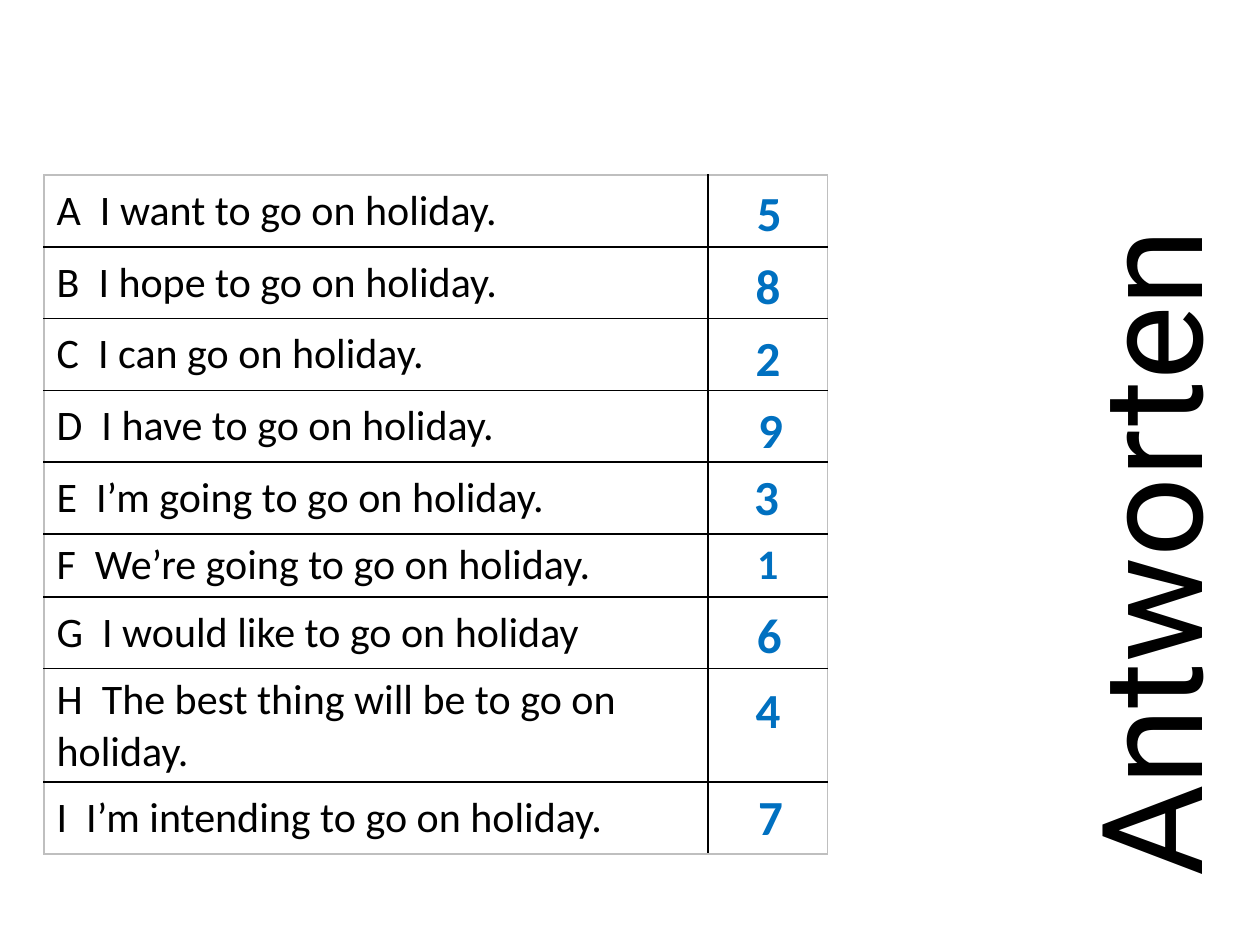
from lxml import etree
from pptx import Presentation
from pptx.dml.color import RGBColor
from pptx.enum import text
from pptx.oxml.ns import qn
from pptx.util import Pt

BLACK = RGBColor(0x00, 0x00, 0x00)
BLUE = RGBColor(0x00, 0x70, 0xC0)
GREY = RGBColor(0xBF, 0xBF, 0xBF)

SENTENCES = [
    "A  I want to go on holiday.",
    "B  I hope to go on holiday.",
    "C  I can go on holiday.",
    "D  I have to go on holiday.",
    "E  I’m going to go on holiday.",
    "F  We’re going to go on holiday.",
    "G  I would like to go on holiday",
    "H  The best thing will be to go on holiday.",
    "I  I’m intending to go on holiday.",
]
# Answer number: left and top of its box
ANSWERS = {
    "5": (416.9, 100.8), "8": (416.2, 142.6), "2": (416.2, 183.6),
    "9": (417.6, 224.6), "3": (415.4, 262.8), "6": (416.9, 342),
    "4": (416.2, 384.5), "7": (417.6, 445.7),
}


def write(frame, words, align, color, **font):
    para = frame.paragraphs[0]
    para.alignment = align
    span = para.add_run()
    span.text = words
    span.font.color.rgb = color
    for name, value in font.items():
        setattr(span.font, name, value)


def draw_border(cell, side, color):
    line = etree.SubElement(cell._tc.get_or_add_tcPr(), qn(f"a:{side}"), w=str(Pt(1)))
    fill = etree.SubElement(line, qn("a:solidFill"))
    etree.SubElement(fill, qn("a:srgbClr"), val=str(color))


deck = Presentation()
deck.slide_width, deck.slide_height = Pt(720), Pt(540)
page = deck.slides.add_slide(deck.slide_layouts[5])

# Title, turned to read upwards along the right edge
title = page.shapes.title
title_format = {"left": Pt(363.6), "top": Pt(164.2), "width": Pt(583.9),
                "height": Pt(104.4), "rotation": 270}
for name, value in title_format.items():
    setattr(title, name, value)
title.text_frame.vertical_anchor = text.MSO_ANCHOR.TOP
title.text_frame.auto_size = text.MSO_AUTO_SIZE.SHAPE_TO_FIT_TEXT
write(title.text_frame, "Antworten", text.PP_ALIGN.LEFT, BLACK,
      name="Roboto", size=Pt(80))

# Table of sentences
rows = len(SENTENCES)
table = page.shapes.add_table(rows, 2, Pt(25.2), Pt(100.1), Pt(447.8), Pt(360)).table
table.first_row = table.horz_banding = False
table.columns[0].width, table.columns[1].width = Pt(379.4), Pt(68.4)
for index, sentence in enumerate(SENTENCES):
    table.rows[index].height = Pt(32.4 if sentence.startswith("F") else 41)
    write(table.cell(index, 0).text_frame, sentence, text.PP_ALIGN.LEFT, BLACK,
          name="Calibri", size=Pt(24))
    for column in range(2):
        cell = table.cell(index, column)
        cell.vertical_anchor = text.MSO_ANCHOR.MIDDLE
        # Grey frame outside, black rules inside
        outer = {"lnL": column == 0, "lnR": column == 1,
                 "lnT": index == 0, "lnB": index == rows - 1}
        for side, is_outer in outer.items():
            draw_border(cell, side, GREY if is_outer else BLACK)
        cell.fill.background()

# The one answer that stands in the table
write(table.cell(5, 1).text_frame, "1", text.PP_ALIGN.CENTER, BLUE,
      name="Calibri", size=Pt(24), bold=True)

# Other answers, laid over the right column
for number, (left, top) in ANSWERS.items():
    box = page.shapes.add_textbox(Pt(left), Pt(top), Pt(45.4), Pt(41))
    frame_format = {"word_wrap": True, "vertical_anchor": text.MSO_ANCHOR.MIDDLE,
                    "auto_size": text.MSO_AUTO_SIZE.SHAPE_TO_FIT_TEXT}
    for name, value in frame_format.items():
        setattr(box.text_frame, name, value)
    write(box.text_frame, number, text.PP_ALIGN.CENTER, BLUE,
          name="Calibri", size=Pt(28), bold=True)

deck.save("out.pptx")
